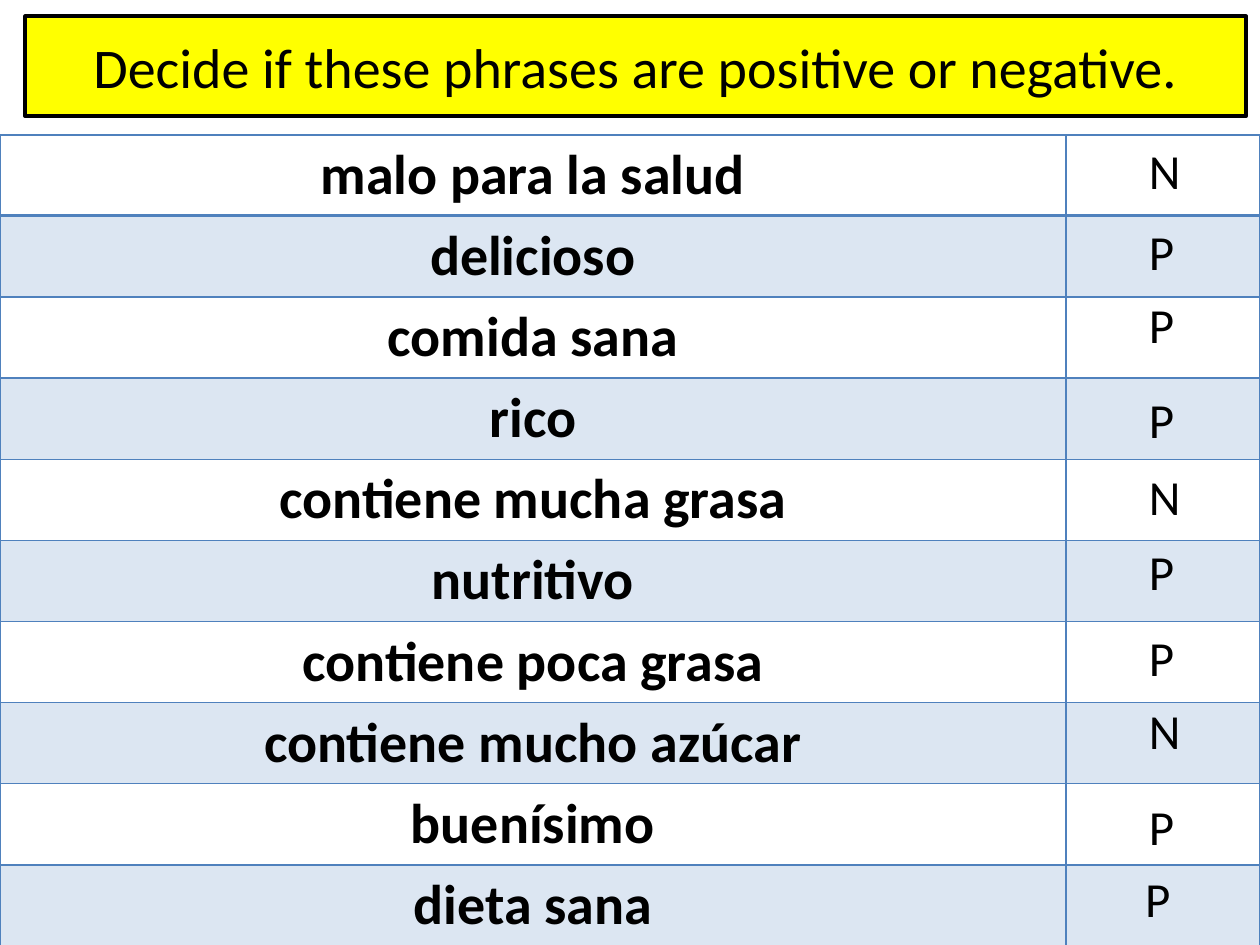
from lxml import etree
from pptx import Presentation
from pptx.dml import color
from pptx.enum import shapes, text
from pptx.oxml import ns
from pptx import util as u

COLORS = {
    "title": "FFFF00",
    "ink": "000000",
    "border": "4F81BD",
    "band": "DCE6F2",
}

ANSWERS = [
    ("malo para la salud", "N", 9.02, 1.07),
    ("delicioso", "P", 9.02, 1.71),
    ("comida sana", "P", 9.02, 2.29),
    ("rico", "P", 9.02, 3.04),
    ("contiene mucha grasa", "N", 9.02, 3.65),
    ("nutritivo", "P", 9.02, 4.25),
    ("contiene poca grasa", "P", 9.02, 4.93),
    ("contiene mucho azúcar", "N", 9.02, 5.51),
    ("buenísimo", "P", 9.02, 6.27),
    ("dieta sana", "P", 8.99, 6.84),
]


def rgb(name):
    return color.RGBColor.from_string(COLORS[name])


class Deck:
    font = "Calibri"

    def __init__(self, width, height):
        self.prs = Presentation()
        self.prs.slide_width = u.Inches(width)
        self.prs.slide_height = u.Inches(height)
        self.slide = self.prs.slides.add_slide(self.prs.slide_layouts[6])

    def add_text(self, tf, words, size, align, bold=False):
        p = tf.paragraphs[0]
        p.alignment = align
        r = p.add_run()
        r.text = words
        r.font.name = self.font
        r.font.size = u.Pt(size)
        r.font.bold = bold
        r.font.color.rgb = rgb("ink")

    def title(self, words, *box):
        sp = self.slide.shapes.add_shape(
            shapes.MSO_SHAPE.ROUNDED_RECTANGLE, *map(u.Inches, box))
        sp.adjustments[0] = 0
        sp.shadow.inherit = False
        sp.fill.solid()
        sp.fill.fore_color.rgb = rgb("title")
        sp.line.color.rgb = rgb("ink")
        sp.line.width = u.Pt(2.25)
        tf = sp.text_frame
        tf.word_wrap = True
        tf.vertical_anchor = text.MSO_ANCHOR.MIDDLE
        self.add_text(tf, words, 32, text.PP_ALIGN.CENTER)

    def borders(self, cell, **widths):
        tc_pr = cell._tc.get_or_add_tcPr()
        for i, side in enumerate(("L", "R", "T", "B")):
            ln = etree.Element(ns.qn(f"a:ln{side}"), w=str(u.Pt(widths.get(side, 1))))
            fill = etree.SubElement(ln, ns.qn("a:solidFill"))
            etree.SubElement(fill, ns.qn("a:srgbClr"), val=COLORS["border"])
            tc_pr.insert(i, ln)

    def table(self, phrases, col_widths, *box):
        frame = self.slide.shapes.add_table(
            len(phrases), len(col_widths), *map(u.Inches, box))
        table = frame.table
        table.first_row = False
        table.horz_banding = False
        for col, width in zip(table.columns, col_widths):
            col.width = u.Inches(width)
        for i, (row, phrase) in enumerate(zip(table.rows, phrases)):
            for cell in row.cells:
                if i % 2:
                    cell.fill.solid()
                    cell.fill.fore_color.rgb = rgb("band")
                else:
                    cell.fill.background()
                self.borders(cell, T=2 if i == 1 else 1, B=2 if i == 0 else 1)
            self.add_text(table.cell(i, 0).text_frame, phrase, 32,
                          text.PP_ALIGN.CENTER, bold=True)

    def mark(self, letter, *box):
        sp = self.slide.shapes.add_textbox(*map(u.Inches, box))
        tf = sp.text_frame
        tf.word_wrap = True
        tf.auto_size = text.MSO_AUTO_SIZE.SHAPE_TO_FIT_TEXT
        self.add_text(tf, letter, 28, text.PP_ALIGN.LEFT)


def main():
    deck = Deck(10, 7.5)
    deck.title("Decide if these phrases are positive or negative.",
               0.2, 0.13, 9.69, 0.79)
    deck.table([answer[0] for answer in ANSWERS], (8.46, 1.54), 0, 1.07, 10, 6.43)
    for _, letter, left, top in ANSWERS:
        deck.mark(letter, left, top, 0.71, 0.57)
    deck.prs.save("out.pptx")


if __name__ == "__main__":
    main()
